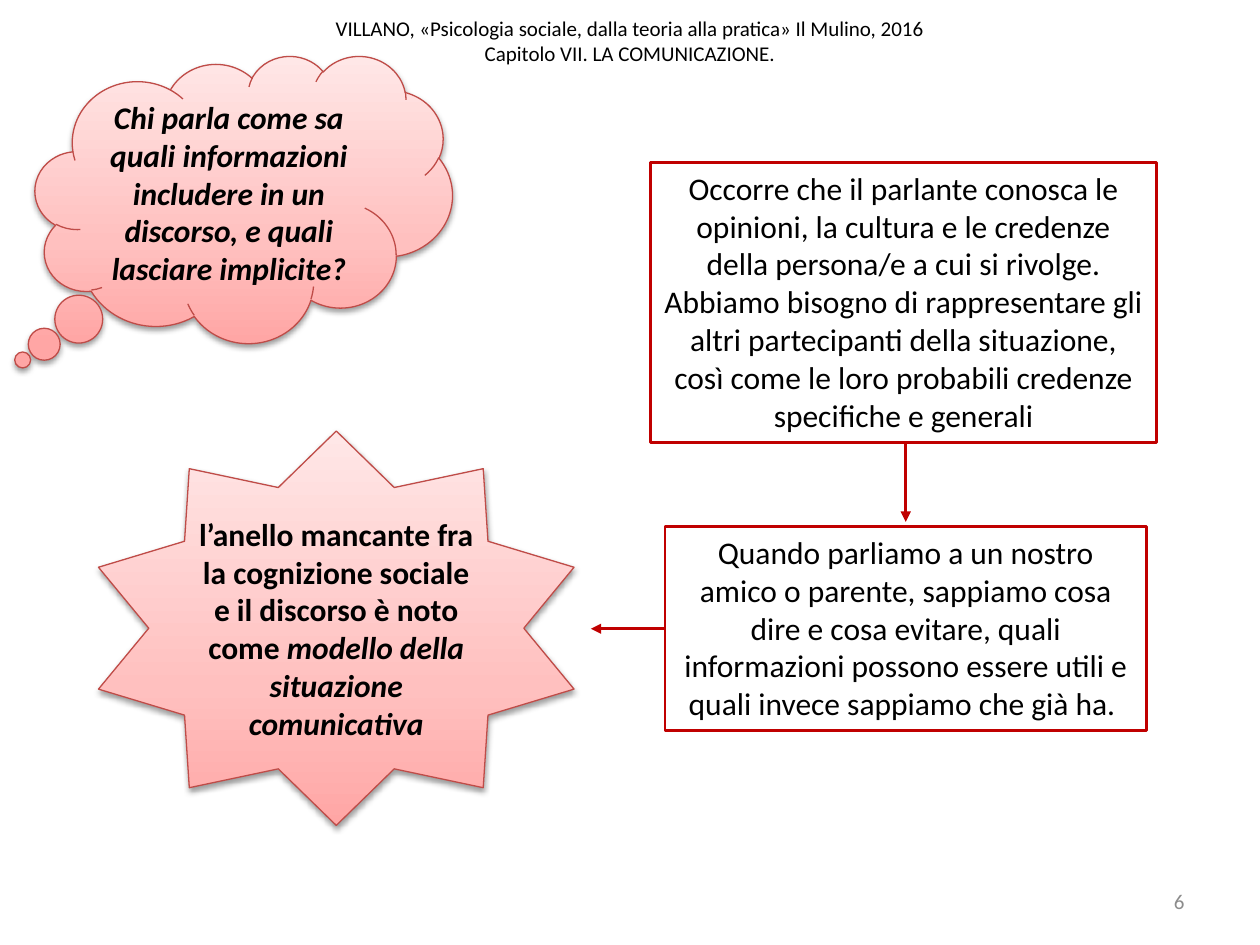
from lxml.etree import SubElement
from pptx import Presentation
from pptx.dml.color import RGBColor
from pptx.enum.shapes import MSO_CONNECTOR, MSO_SHAPE
from pptx.enum.text import MSO_ANCHOR, MSO_AUTO_SIZE, PP_ALIGN
from pptx.oxml import parse_xml
from pptx.oxml.ns import nsdecls, qn
from pptx.util import Cm, Pt

BLACK = RGBColor(0x00, 0x00, 0x00)
GREY = RGBColor(0x8C, 0x8C, 0x8C)
RED = RGBColor(0xC0, 0x00, 0x00)
ROSE = RGBColor(0xBF, 0x4C, 0x48)
GRADIENT = (
    (0, RGBColor(0xFF, 0xA6, 0xA5)),
    (35, RGBColor(0xFF, 0xC0, 0xBF)),
    (100, RGBColor(0xFF, 0xE7, 0xE7)),
)


def write_text(shape, *paragraphs, size=18, color=BLACK, bold=False,
               align=PP_ALIGN.CENTER, anchor=MSO_ANCHOR.MIDDLE,
               auto_size=MSO_AUTO_SIZE.NONE):
    frame = shape.text_frame
    frame.word_wrap = True
    frame.auto_size = auto_size
    frame.vertical_anchor = anchor
    for index, pieces in enumerate(paragraphs):
        paragraph = frame.add_paragraph() if index else frame.paragraphs[0]
        paragraph.alignment = align
        for text, italic in pieces:
            for number, line in enumerate(text.split("\n")):
                if number:
                    paragraph.add_line_break()
                run = paragraph.add_run()
                run.text = line
                run.font.name = "Calibri"
                run.font.size = Pt(size)
                run.font.bold = bold
                run.font.italic = italic
                run.font.color.rgb = color


def place(shape, box):
    shape.left, shape.top, shape.width, shape.height = (Cm(length) for length in box)


def add_title(slide, box, text):
    title = slide.shapes.title
    place(title, box)
    write_text(title, [(text, False)], size=12)


def add_page_number(slide, box, number):
    shape = slide.shapes.add_textbox(*(Cm(length) for length in box))
    write_text(shape, [(number, False)], size=12, color=GREY, align=PP_ALIGN.RIGHT)


def add_rose_shape(slide, box, kind, adjustments, pieces):
    shape = slide.shapes.add_shape(kind, *(Cm(length) for length in box))
    for index, value in enumerate(adjustments):
        shape.adjustments[index] = value
    shape.line.color.rgb = ROSE
    shape.line.width = Pt(0.75)
    stops = "".join(
        f'<a:gs pos="{position * 1000}"><a:srgbClr val="{color}"/></a:gs>'
        for position, color in GRADIENT
    )
    properties = shape.element.spPr
    properties.find(qn("a:ln")).addprevious(parse_xml(
        f'<a:gradFill {nsdecls("a")} rotWithShape="1"><a:gsLst>{stops}</a:gsLst>'
        '<a:lin ang="16200000" scaled="0"/></a:gradFill>'
    ))
    properties.append(parse_xml(
        f'<a:effectLst {nsdecls("a")}><a:outerShdw blurRad="{Pt(3.1)}" '
        f'dist="{Pt(1.6)}" dir="5400000" rotWithShape="0">'
        '<a:srgbClr val="000000"><a:alpha val="38000"/></a:srgbClr>'
        '</a:outerShdw></a:effectLst>'
    ))
    write_text(shape, pieces, bold=True)


def add_framed_text(slide, box, *texts):
    shape = slide.shapes.add_textbox(*(Cm(length) for length in box))
    shape.line.color.rgb = RED
    shape.line.width = Pt(1.5)
    write_text(shape, *([(text, False)] for text in texts),
               anchor=MSO_ANCHOR.TOP, auto_size=MSO_AUTO_SIZE.SHAPE_TO_FIT_TEXT)
    place(shape, box)


def add_arrow(slide, start, end):
    arrow = slide.shapes.add_connector(
        MSO_CONNECTOR.STRAIGHT, *(Cm(length) for length in start + end))
    arrow.line.color.rgb = RED
    arrow.line.width = Pt(1.5)
    SubElement(arrow.line._get_or_add_ln(), qn("a:tailEnd"), type="triangle")
    SubElement(arrow.element.spPr, qn("a:effectLst"))


def main():
    presentation = Presentation()
    presentation.slide_width = Cm(25.4)
    presentation.slide_height = Cm(19.05)
    slide = presentation.slides.add_slide(presentation.slide_layouts[5])

    add_title(slide, (0, -0.28, 25.4, 2.21),
              "VILLANO, «Psicologia sociale, dalla teoria alla pratica» Il Mulino, 2016\n"
              "Capitolo VII. LA COMUNICAZIONE.")
    add_page_number(slide, (18.21, 17.65, 5.92, 1.02), "6")
    add_rose_shape(
        slide, (0.71, 1.12, 8.41, 5.79), MSO_SHAPE.CLOUD_CALLOUT, (-0.53, 0.56),
        [("Chi parla come sa quali informazioni includere in un discorso, "
          "e quali lasciare implicite?", True)])

    speaker_box = (13.11, 3.28, 10.21, 5.64)
    example_box = (13.41, 10.62, 9.7, 4.11)
    add_framed_text(
        slide, speaker_box,
        "Occorre che il parlante conosca le opinioni, la cultura e le credenze "
        "della persona/e a cui si rivolge.",
        "Abbiamo bisogno di rappresentare gli altri partecipanti della situazione, "
        "così come le loro probabili credenze specifiche e generali")
    add_framed_text(
        slide, example_box,
        "Quando parliamo a un nostro amico o parente, sappiamo cosa dire e cosa "
        "evitare, quali informazioni possono essere utili e quali invece sappiamo "
        "che già ha. ")

    left, top, width, height = example_box
    center, middle = left + width / 2, top + height / 2
    add_arrow(slide, (center, speaker_box[1] + speaker_box[3]), (center, top - 0.1))
    add_arrow(slide, (left, middle), (left - 1.5, middle))
    add_rose_shape(
        slide, (1.98, 8.69, 9.6, 7.95), MSO_SHAPE.STAR_10_POINT, (0.375, 1.05),
        [("l’anello mancante fra la cognizione sociale e il discorso è noto come ", False),
         ("modello della situazione comunicativa", True)])

    presentation.save("out.pptx")


if __name__ == "__main__":
    main()
